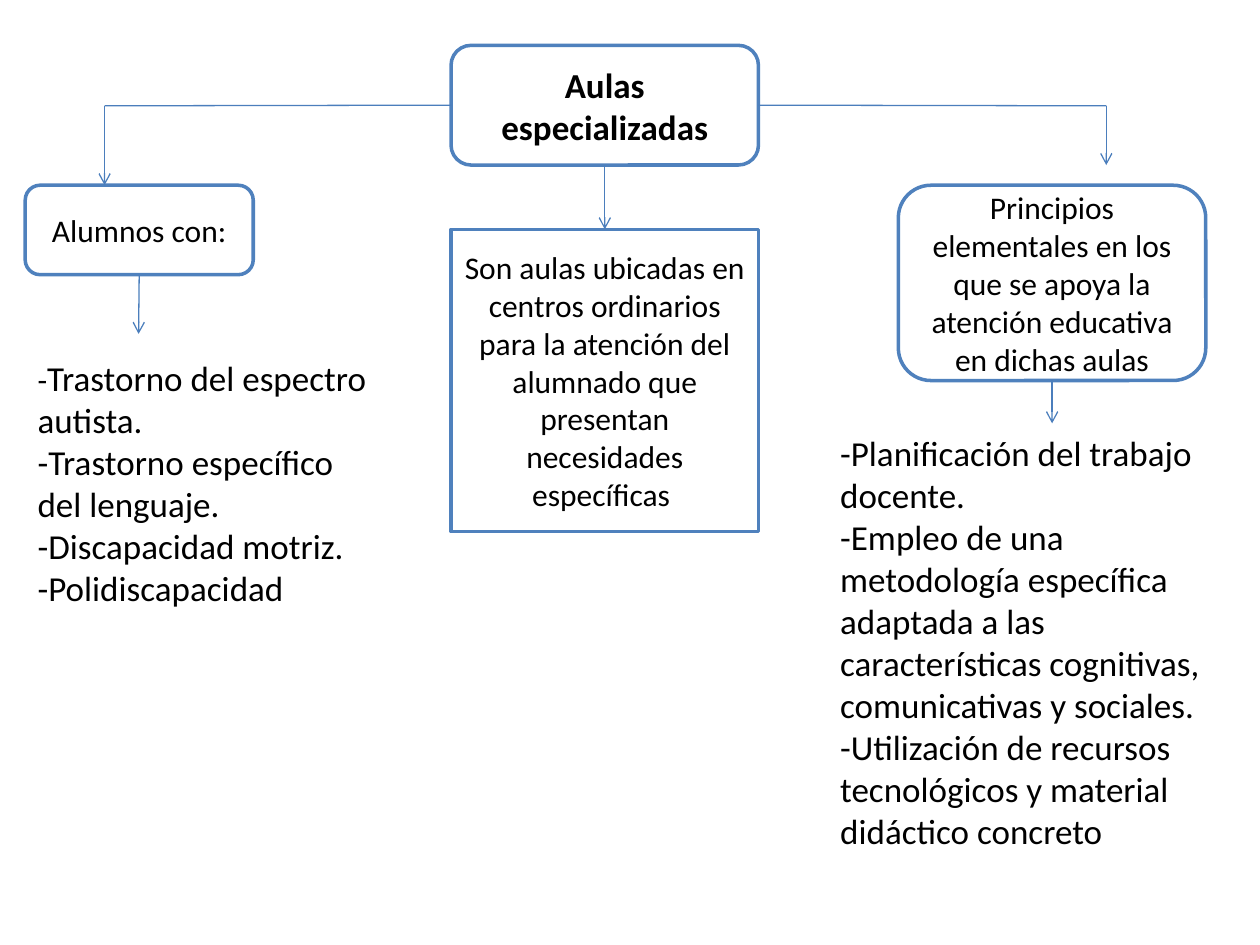
from pptx import Presentation
from pptx.dml.color import RGBColor
from pptx.enum.shapes import MSO_CONNECTOR, MSO_SHAPE
from pptx.enum.text import MSO_ANCHOR, PP_ALIGN
from pptx.oxml.ns import qn
from pptx.util import Inches, Pt
from lxml import etree

RECT = MSO_SHAPE.RECTANGLE
ROUNDED = MSO_SHAPE.ROUNDED_RECTANGLE
STRAIGHT = MSO_CONNECTOR.STRAIGHT
MIDDLE = MSO_ANCHOR.MIDDLE
LEFT, CENTER = PP_ALIGN.LEFT, PP_ALIGN.CENTER
SIDE_TOP, SIDE_LEFT, SIDE_BOTTOM, SIDE_RIGHT = range(4)


def rgb(value):
    return RGBColor.from_string(value)


class ConceptMap:
    font = "Calibri"
    text_color = "000000"
    fill_color = "FFFFFF"
    border_color = "4F81BD"
    arrow_color = "4B7EBC"

    def __init__(self, slide):
        self.slide = slide

    def _shape(self, kind, box):
        sp = self.slide.shapes.add_shape(kind, *map(Inches, box))
        sp.shadow.inherit = False
        sp.fill.solid()
        sp.fill.fore_color.rgb = rgb(self.fill_color)
        sp.text_frame.word_wrap = True
        sp.text_frame.vertical_anchor = MIDDLE
        return sp

    def _run(self, p, text, size, bold=False):
        r = p.add_run()
        r.text = text
        r.font.name = self.font
        r.font.size = Pt(size)
        r.font.bold = bold
        r.font.color.rgb = rgb(self.text_color)

    def node(self, box, text, size=18, bold=False, kind=ROUNDED):
        sp = self._shape(kind, box)
        sp.line.color.rgb = rgb(self.border_color)
        sp.line.width = Pt(2)
        p = sp.text_frame.paragraphs[0]
        p.alignment = CENTER
        self._run(p, text, size, bold)
        return sp

    def item_list(self, box, items, first_dash_size=20):
        """Add a borderless list whose items each begin with a typed dash."""
        sp = self._shape(RECT, box)
        sp.line.fill.background()
        tf = sp.text_frame
        for i, item in enumerate(items):
            p = tf.add_paragraph() if i else tf.paragraphs[0]
            p.alignment = LEFT
            self._run(p, "-", 20 if i else first_dash_size)
            self._run(p, item, 20)

    def connector(self, start, end, begin=None, finish=None, arrow=True):
        """Draw a line; begin and finish are optional (shape, side) joints."""
        line = self.slide.shapes.add_connector(
            STRAIGHT, *map(Inches, start + end))
        if begin:
            line.begin_connect(*begin)
        if finish:
            line.end_connect(*finish)
        line.line.color.rgb = rgb(self.arrow_color)
        line.line.width = Pt(0.75)
        if arrow:
            ln = line.line._get_or_add_ln()
            etree.SubElement(ln, qn("a:tailEnd"), type="arrow")
        etree.SubElement(line._element.spPr, qn("a:effectLst"))


def main():
    prs = Presentation()
    prs.slide_width, prs.slide_height = Inches(10), Inches(7.5)
    cmap = ConceptMap(prs.slides.add_slide(prs.slide_layouts[6]))

    title = cmap.node((3.58, 0.36, 2.44, 0.95), "Aulas especializadas",
                      size=20, bold=True)
    students = cmap.node((0.2, 1.47, 1.81, 0.71), "Alumnos con:")
    definition = cmap.node(
        (3.58, 1.82, 2.44, 2.4),
        "Son aulas ubicadas en centros ordinarios para la atención del "
        "alumnado que presentan necesidades específicas ", kind=RECT)
    principles = cmap.node(
        (7.13, 1.47, 2.44, 1.55),
        "Principios elementales en los que se apoya la atención educativa "
        "en dichas aulas")

    cmap.item_list((0.2, 2.65, 2.83, 2.36), [
        "Trastorno del espectro autista.",
        "Trastorno específico del lenguaje.",
        "Discapacidad motriz.",
        "Polidiscapacidad",
    ], first_dash_size=18)
    cmap.item_list((6.57, 3.36, 3.23, 3.46), [
        "Planificación del trabajo docente.",
        "Empleo de una metodología específica adaptada a las "
        "características cognitivas, comunicativas y sociales.",
        "Utilización de recursos tecnológicos y material didáctico concreto",
    ])

    branch_y = 0.84
    for title_x, side, branch_x, tip_y in ((3.58, SIDE_LEFT, 0.83, 1.47),
                                           (6.02, SIDE_RIGHT, 8.78, 1.31)):
        corner = (branch_x, branch_y)
        cmap.connector((title_x, branch_y), corner, begin=(title, side),
                       arrow=False)
        cmap.connector(corner, (branch_x, tip_y))
    cmap.connector((4.8, 1.31), (4.8, 1.82), begin=(title, SIDE_BOTTOM),
                   finish=(definition, SIDE_TOP))
    cmap.connector((1.1, 2.18), (1.1, 2.65), begin=(students, SIDE_BOTTOM))
    cmap.connector((8.35, 3.02), (8.35, 3.36),
                   begin=(principles, SIDE_BOTTOM))

    prs.save("out.pptx")


if __name__ == "__main__":
    main()
